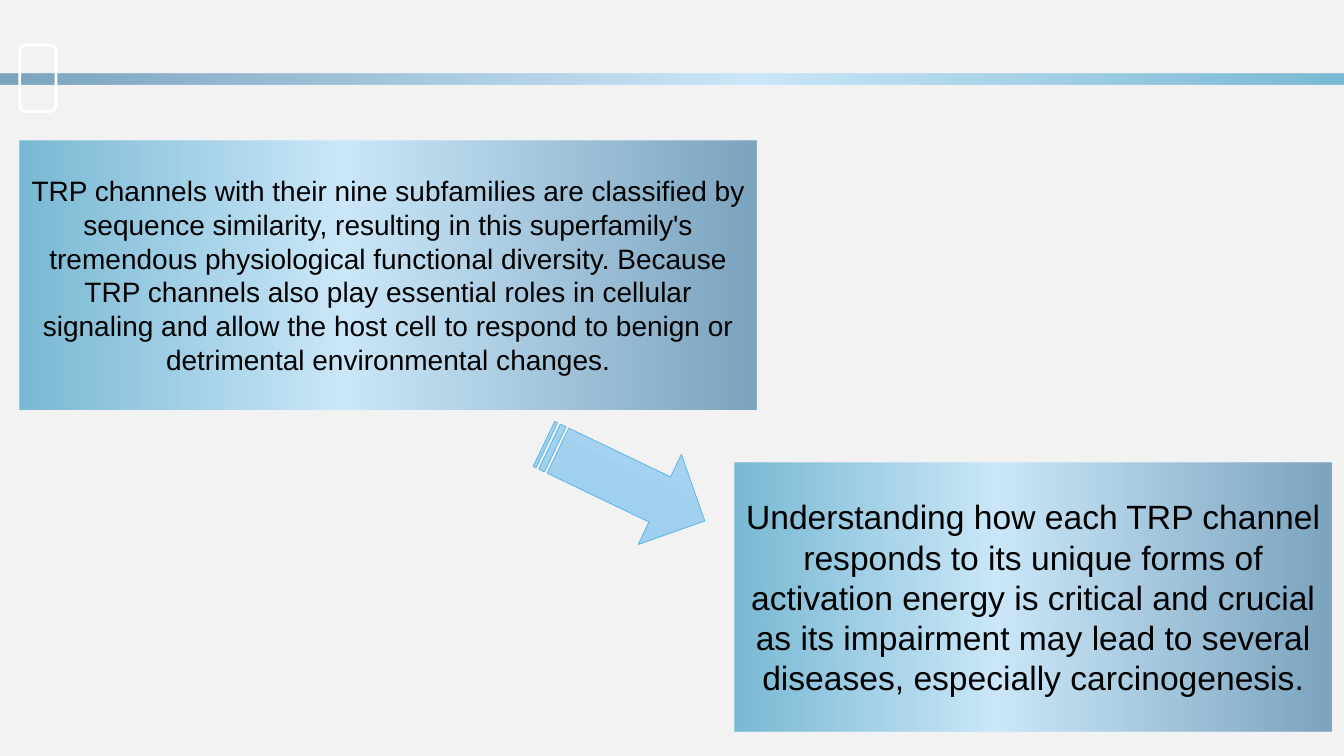
import pptx
import pptx.util
import pptx.oxml
import pptx.oxml.ns
import pptx.dml.color
import pptx.enum.shapes
import pptx.enum.text

Pt = pptx.util.Pt
RGB = pptx.dml.color.RGBColor
KIND = pptx.enum.shapes.MSO_SHAPE
qn = pptx.oxml.ns.qn

PAPER = RGB(0xF2, 0xF2, 0xF2)
WHITE = RGB(0xFF, 0xFF, 0xFF)
BLACK = RGB(0x00, 0x00, 0x00)
EDGE = RGB(0x58, 0xB6, 0xE5)
TEAL = RGB(0x5C, 0xAB, 0xCC)
PALE = RGB(0xC2, 0xE5, 0xFB)
STEEL = RGB(0x5F, 0x91, 0xB2)
SKY = RGB(0xB1, 0xD9, 0xF3)
MID = RGB(0xA2, 0xD1, 0xEF)
DEEP = RGB(0x92, 0xCC, 0xF1)

# Gradients: stops (percent, colour), opacity in percent, angle
BAND = ([(0, TEAL), (44, PALE), (100, STEEL)], 80, 0)
GLOW = ([(0, SKY), (50, MID), (100, DEEP)], 100, 270)

CAUSE = ("TRP channels with their nine subfamilies are classified by sequence "
         "similarity, resulting in this superfamily's tremendous physiological "
         "functional diversity. Because TRP channels also play essential roles "
         "in cellular signaling and allow the host cell to respond to benign or "
         "detrimental environmental changes.")
NEED = ("Understanding how each TRP channel responds to its unique forms of "
        "activation energy is critical and crucial as its impairment may lead "
        "to several diseases, especially carcinogenesis.")


def apply(item, form):
    for name, value in form.items():
        setattr(item, name, value)


def shade(shape, stops, alpha, angle):
    shape.fill.gradient()
    shape.fill.gradient_angle = angle
    stack = shape.element.spPr.find(qn("a:gradFill")).find(qn("a:gsLst"))
    for old in list(stack):
        stack.remove(old)
    for pos, tint in stops:
        stack.append(pptx.oxml.parse_xml(
            f'<a:gs {pptx.oxml.ns.nsdecls("a")} pos="{pos * 1000}">'
            f'<a:srgbClr val="{tint}"><a:alpha val="{alpha * 1000}"/>'
            '</a:srgbClr></a:gs>'))


def draw(slide, kind, box, blend=None, line=None, turn=0):
    shape = slide.shapes.add_shape(kind, *map(Pt, box))
    shape.shadow.inherit = False
    shape.rotation = turn
    if blend:
        shade(shape, *blend)
    else:
        shape.fill.background()
    if line:
        tint, width = line
        shape.line.color.rgb = tint
        shape.line.width = Pt(width)
    else:
        shape.line.fill.background()
    return shape


def panel(slide, box, text, size):
    frame = draw(slide, KIND.RECTANGLE, box, BAND).text_frame
    apply(frame, {"word_wrap": True,
                  "vertical_anchor": pptx.enum.text.MSO_ANCHOR.MIDDLE})
    para = frame.paragraphs[0]
    para.alignment = pptx.enum.text.PP_ALIGN.CENTER
    run = para.add_run()
    run.text = text
    apply(run.font, {"name": "Arial", "size": Pt(size)})
    run.font.color.rgb = BLACK


def main():
    deck = pptx.Presentation()
    apply(deck, {"slide_width": Pt(960), "slide_height": Pt(540)})
    slide = deck.slides.add_slide(deck.slide_layouts[6])
    fill = slide.background.fill
    fill.solid()
    fill.fore_color.rgb = PAPER

    # Header strip, mirrored, with its empty tab
    strip = draw(slide, KIND.RECTANGLE, (0, 52.4, 960, 8), BAND)
    strip.element.spPr.find(qn("a:xfrm")).set("flipH", "1")
    draw(slide, KIND.ROUNDED_RECTANGLE, (14.2, 32.2, 25.8, 47.4),
         line=(WHITE, 2))

    # Two statements joined by an arrow
    panel(slide, (14.2, 100.2, 526.4, 192.2), CAUSE, 20)
    draw(slide, KIND.STRIPED_RIGHT_ARROW, (382.3, 309, 127.4, 71.3), GLOW,
         (EDGE, 0.5), 25.6)
    panel(slide, (524.7, 330.3, 426.5, 192.2), NEED, 24)

    deck.save("out.pptx")


if __name__ == "__main__":
    main()
